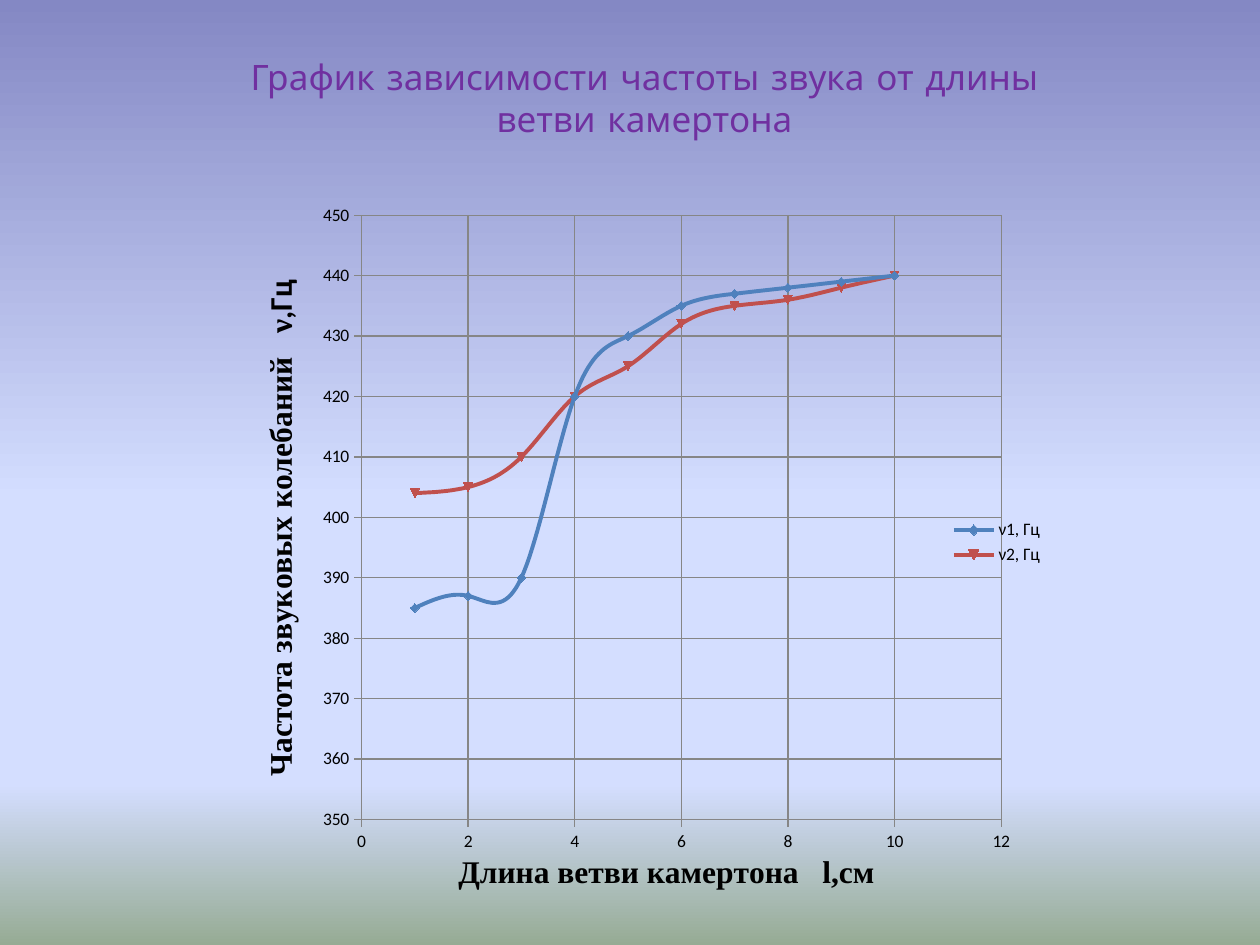
from lxml import etree
from pptx import Presentation
from pptx.chart.data import XyChartData
from pptx.dml.color import RGBColor
from pptx.enum.chart import XL_CHART_TYPE, XL_LEGEND_POSITION, XL_TICK_MARK
from pptx.enum.text import MSO_AUTO_SIZE, PP_ALIGN
from pptx.oxml.ns import qn
from pptx.util import Inches, Pt

BACKGROUND_STOPS = [(0, "8488C4"), (53, "D4DEFF"), (83, "D4DEFF"), (100, "96AB94")]
LENGTHS = range(1, 11)
FREQUENCIES = {
    "ν1, Гц": ("4F81BD", [385, 387, 390, 420, 430, 435, 437, 438, 439, 440]),
    "ν2, Гц": ("C0504D", [404, 405, 410, 420, 425, 432, 435, 436, 438, 440]),
}
PLOT_AREA = {"layoutTarget": "inner", "xMode": "edge", "yMode": "edge",
             "x": 0.186, "y": 0.042, "w": 0.75, "h": 0.846}
HEADING = {"name": "Comic Neue", "size": Pt(20)}
CHART_TEXT = {"name": "Calibri", "size": Pt(10)}
AXIS_TITLE = {"name": "Times New Roman", "size": Pt(18), "bold": True}
AXIS_UNIT = {**AXIS_TITLE, "name": "Calibri"}


def color(hex_value):
    return RGBColor.from_string(hex_value)


def apply(target, values):
    for name, value in values.items():
        setattr(target, name, value)


def place_plot(plot_area, values):
    """Fix the plot area by fractions of the chart."""
    layout = plot_area.find(qn("c:layout"))
    if layout is None:
        layout = etree.Element(qn("c:layout"))
        plot_area.insert(0, layout)
    manual = etree.SubElement(layout, qn("c:manualLayout"))
    for name, value in values.items():
        etree.SubElement(manual, qn(f"c:{name}"), val=str(value))


def smooth_line(series):
    """Curve a scatter series, which has no public smooth property."""
    element = series._element
    smooth = element.find(qn("c:smooth"))
    if smooth is None:
        smooth = etree.SubElement(element, qn("c:smooth"))
    smooth.set("val", "1")


class SlideBuilder:
    def __init__(self, page, text_color, grid_color):
        self.page = page
        self.text_color = text_color
        self.grid_color = grid_color

    def background(self, stops):
        fill = self.page.background.fill
        fill.gradient()
        fill.gradient_angle = 270
        properties = self.page.background._cSld.bg.bgPr
        stop_list = properties.find(".//" + qn("a:gsLst"))
        for stop in list(stop_list):
            stop_list.remove(stop)
        for percent, hex_value in stops:
            stop = etree.SubElement(stop_list, qn("a:gs"), pos=str(percent * 1000))
            etree.SubElement(stop, qn("a:srgbClr"), val=hex_value)

    def span(self, para, text, style, hex_value):
        span = para.add_run()
        span.text = text
        apply(span.font, style)
        span.font.color.rgb = color(hex_value)

    def heading(self, text, place, hex_value):
        box = self.page.shapes.add_textbox(*map(Inches, place))
        apply(box.text_frame, {"word_wrap": True,
                               "auto_size": MSO_AUTO_SIZE.SHAPE_TO_FIT_TEXT})
        para = box.text_frame.paragraphs[0]
        para.alignment = PP_ALIGN.CENTER
        self.span(para, text, HEADING, hex_value)

    def axis(self, axis, scale, spans):
        apply(axis, {**scale, "has_major_gridlines": True,
                     "major_tick_mark": XL_TICK_MARK.CROSS})
        for line in (axis.format.line, axis.major_gridlines.format.line):
            line.color.rgb = color(self.grid_color)
            line.width = Pt(0.75)
        para = axis.axis_title.text_frame.paragraphs[0]
        for text, style in spans:
            self.span(para, text, style, self.text_color)

    def scatter_chart(self, place, x_values, lines):
        data = XyChartData(number_format="General")
        for name, (_, y_values) in lines.items():
            series = data.add_series(name)
            for x, y in zip(x_values, y_values):
                series.add_data_point(x, y)
        chart = self.page.shapes.add_chart(
            XL_CHART_TYPE.XY_SCATTER_SMOOTH, *map(Inches, place), data).chart
        apply(chart, {"has_title": False, "has_legend": True})
        apply(chart.font, CHART_TEXT)
        chart.font.color.rgb = color(self.text_color)
        apply(chart.legend, {"position": XL_LEGEND_POSITION.RIGHT,
                             "include_in_layout": False})
        plot = chart.plots[0]
        plot.vary_by_categories = False
        for series, (hex_value, _) in zip(plot.series, lines.values()):
            smooth_line(series)
            series.format.line.color.rgb = color(hex_value)
            series.format.line.width = Pt(2.25)
        place_plot(chart._chartSpace.chart.plotArea, PLOT_AREA)
        return chart


def main():
    deck = Presentation()
    deck.slide_width, deck.slide_height = Inches(10), Inches(7.5)
    page = deck.slides.add_slide(deck.slide_layouts[6])
    builder = SlideBuilder(page, text_color="000000", grid_color="868686")
    builder.background(BACKGROUND_STOPS)
    builder.heading("График зависимости частоты звука от длины ветви камертона",
                    (1.48, 0.39, 7.27, 0.77), "7030A0")
    chart = builder.scatter_chart((1.61, 1.47, 6.77, 5.67), LENGTHS, FREQUENCIES)
    builder.axis(chart.category_axis,
                 {"minimum_scale": 0, "maximum_scale": 12, "major_unit": 2},
                 [("Длина ветви камертона   l,см", AXIS_TITLE)])
    builder.axis(chart.value_axis,
                 {"minimum_scale": 350, "maximum_scale": 450, "major_unit": 10},
                 [("Частота звуковых колебаний   ν", AXIS_TITLE), (",Гц", AXIS_UNIT)])
    deck.save("out.pptx")


if __name__ == "__main__":
    main()
